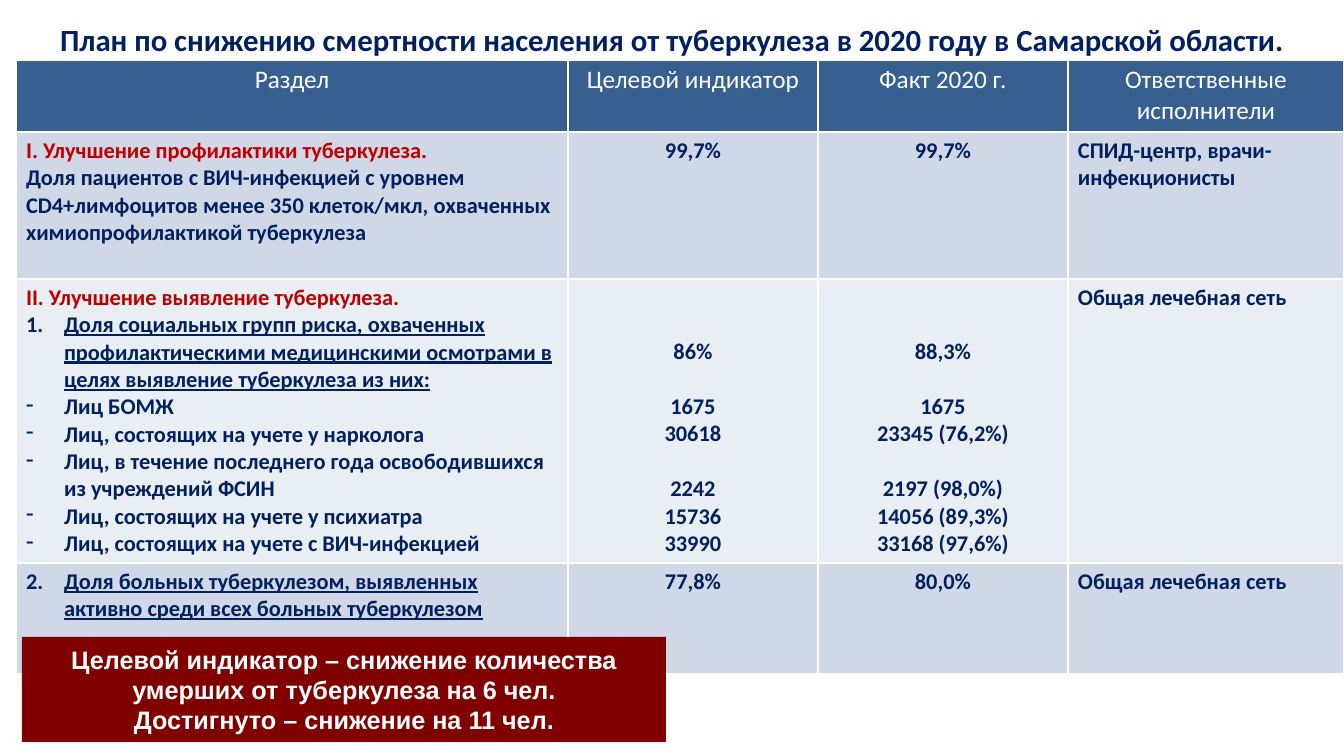
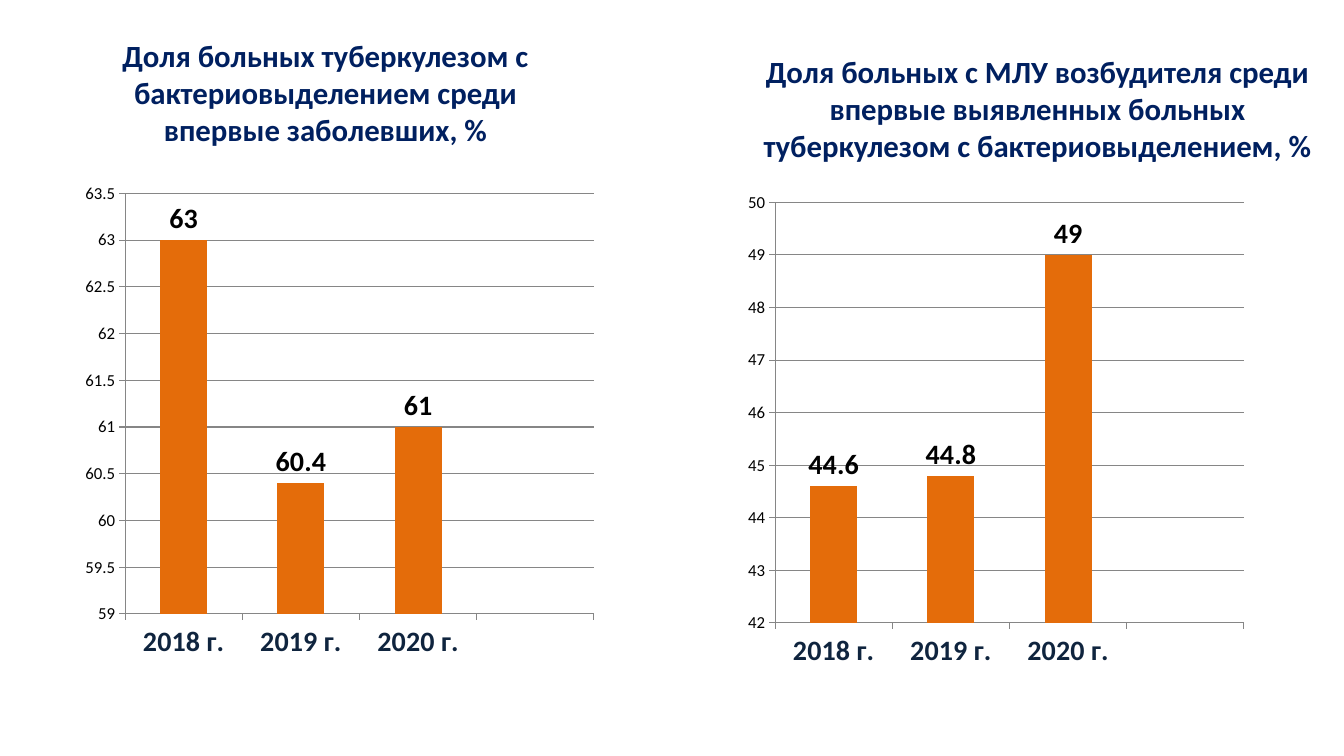
from lxml.etree import SubElement
from pptx import Presentation
from pptx.chart.data import CategoryChartData
from pptx.dml.color import RGBColor
from pptx.enum.chart import XL_CHART_TYPE as ChartType, XL_LABEL_POSITION as LabelAt, XL_TICK_MARK as Tick
from pptx.enum.shapes import MSO_SHAPE as Shape
from pptx.enum.text import MSO_ANCHOR as Anchor, PP_ALIGN as Align
from pptx.oxml.ns import qn
from pptx.util import Emu, Pt

COLORS = {
    "navy": "002060", "red": "C00000", "maroon": "800000", "white": "FFFFFF",
    "header": "376091", "band": "D0D8E8", "light": "E9EDF4",
    "bar": "E46C0A", "category": "0F243E", "black": "000000", "grid": "868686",
}

STYLES = {
    "title": dict(size=22, bold=True, color="navy", align=Align.CENTER),
    "header": dict(size=18, bold=False, color="white", align=Align.CENTER),
    "section": dict(size=16, bold=True, color="red"),
    "body": dict(size=16, bold=True, color="navy"),
    "value": dict(size=16, bold=True, color="navy", align=Align.CENTER),
    "first": dict(size=16, bold=True, color="navy", underline=True, number=1),
    "second": dict(size=16, bold=True, color="navy", underline=True, number=2),
    "dash": dict(size=16, bold=True, color="navy", dash="-"),
    "result": dict(size=18, bold=True, color="white", align=Align.CENTER, name="Arial"),
    "category": dict(size=20, bold=True, color="category"),
    "scale": dict(size=12, bold=False, color="black"),
    "label": dict(size=20, bold=True, color="black"),
}

PLAN_TITLE = "План по снижению смертности населения от туберкулеза в 2020 году в Самарской области."
PLAN_COLUMNS = [552, 250, 250, 276]
PLAN_ROWS = [
    (72, "header", [
        [("header", "Раздел")], [("header", "Целевой индикатор")],
        [("header", "Факт 2020 г.")], [("header", "Ответственные исполнители")],
    ]),
    (147, "band", [
        [("section", "I. Улучшение профилактики туберкулеза."),
         ("body", "Доля пациентов с ВИЧ-инфекцией с уровнем CD4+лимфоцитов менее 350 клеток/мкл, "
                  "охваченных химиопрофилактикой туберкулеза")],
        [("value", "99,7%")], [("value", "99,7%")],
        [("body", "СПИД-центр, врачи-инфекционисты")],
    ]),
    (284, "light", [
        [("section", "II. Улучшение выявление туберкулеза."),
         ("first", "Доля социальных групп риска, охваченных профилактическими медицинскими "
                   "осмотрами в целях выявление туберкулеза из них:"),
         ("dash", "Лиц БОМЖ"),
         ("dash", "Лиц, состоящих на учете у нарколога"),
         ("dash", "Лиц, в течение последнего года освободившихся из учреждений ФСИН"),
         ("dash", "Лиц, состоящих на учете у психиатра"),
         ("dash", "Лиц, состоящих на учете с ВИЧ-инфекцией")],
        [("value", "86%", 2), ("value", "1675", 1), ("value", "30618"),
         ("value", "2242", 1), ("value", "15736"), ("value", "33990")],
        [("value", "88,3%", 2), ("value", "1675", 1), ("value", "23345 (76,2%)"),
         ("value", "2197 (98,0%)", 1), ("value", "14056 (89,3%)"), ("value", "33168 (97,6%)")],
        [("body", "Общая лечебная сеть")],
    ]),
    (111, "band", [
        [("second", "Доля больных туберкулезом, выявленных активно среди всех больных туберкулезом")],
        [("value", "77,8%")], [("value", "80,0%")],
        [("body", "Общая лечебная сеть")],
    ]),
]
RESULT = [
    ("result", "Целевой индикатор – снижение количества умерших от туберкулеза на 6 чел."),
    ("result", "Достигнуто – снижение на 11 чел."),
]

YEARS = ["2018 г.", "2019 г.", "2020 г.", ""]
SHARES = [
    dict(title="Доля больных туберкулезом с бактериовыделением среди впервые заболевших, %",
         title_box=(70, 29, 511, 126), chart_box=(68, 176, 539, 499),
         values=[63, 60.4, 61, None], low=59, high=63.5, step=0.5, plot_left=0.106),
    dict(title="Доля больных с МЛУ возбудителя среди впервые выявленных больных "
               "туберкулезом с бактериовыделением, %",
         title_box=(748, 47, 579, 122), chart_box=(711, 185, 539, 499),
         values=[44.6, 44.8, 49, None], low=42, high=50, step=1, plot_left=0.119),
]

LINE = Pt(19.5)
CELL_TOP = 5
HANGING = 38


def px(length):
    return Emu(round(length * 914400 / 100.8))


def rgb(color):
    return RGBColor.from_string(COLORS[color])


def set_font(font, style):
    values = dict(name=style.get("name", "Calibri"), size=Pt(style["size"]),
                  bold=style["bold"], underline=style.get("underline"))
    for key, value in values.items():
        setattr(font, key, value)
    font.color.rgb = rgb(style["color"])


def set_bullet(paragraph, style):
    props = paragraph._p.get_or_add_pPr()
    props.set("marL", str(px(HANGING)))
    props.set("indent", str(-px(HANGING)))
    if "dash" in style:
        SubElement(props, qn("a:buChar"), char=style["dash"])
    else:
        SubElement(props, qn("a:buAutoNum"), type="arabicPeriod", startAt=str(style["number"]))


def write(frame, paragraphs):
    frame.word_wrap = True
    for index, (kind, text, *blank) in enumerate(paragraphs):
        style = STYLES[kind]
        paragraph = frame.paragraphs[0] if index == 0 else frame.add_paragraph()
        paragraph.alignment = style.get("align", Align.LEFT)
        if blank and index:
            paragraph.space_before = LINE * blank[0]
        if "dash" in style or "number" in style:
            set_bullet(paragraph, style)
        run = paragraph.add_run()
        run.text = text
        set_font(run.font, style)


def add_title(slide, text, box):
    frame = slide.shapes.add_textbox(*map(px, box)).text_frame
    frame.vertical_anchor = Anchor.MIDDLE
    write(frame, [("title", text)])


def add_borders(cell):
    props = cell._tc.get_or_add_tcPr()
    for side in ("lnL", "lnR", "lnT", "lnB"):
        line = SubElement(props, qn(f"a:{side}"), w=str(Pt(1)))
        SubElement(SubElement(line, qn("a:solidFill")), qn("a:srgbClr"), val=COLORS["white"])


def add_plan(slide):
    height = sum(row[0] for row in PLAN_ROWS)
    table = slide.shapes.add_table(
        len(PLAN_ROWS), len(PLAN_COLUMNS), px(16), px(60), px(sum(PLAN_COLUMNS)), px(height)).table
    for column, width in zip(table.columns, PLAN_COLUMNS):
        column.width = px(width)
    for row, (height, fill, contents) in zip(table.rows, PLAN_ROWS):
        row.height = px(height)
        for cell, paragraphs in zip(row.cells, contents):
            add_borders(cell)
            cell.fill.solid()
            cell.fill.fore_color.rgb = rgb(fill)
            cell.margin_top = px(CELL_TOP) + LINE * sum(paragraphs[0][2:])
            write(cell.text_frame, paragraphs)


def add_result(slide):
    panel = slide.shapes.add_shape(Shape.RECTANGLE, *map(px, (22, 637, 644, 105)))
    panel.shadow.inherit = False
    panel.fill.solid()
    panel.fill.fore_color.rgb = rgb("maroon")
    panel.line.fill.background()
    panel.text_frame.vertical_anchor = Anchor.MIDDLE
    write(panel.text_frame, RESULT)


def set_plot_layout(chart, left):
    area = chart._chartSpace.chart.plotArea
    for old in area.findall(qn("c:layout")):
        area.remove(old)
    layout = area.makeelement(qn("c:layout"))
    area.insert(0, layout)
    manual = SubElement(layout, qn("c:manualLayout"))
    for key, value in dict(layoutTarget="inner", xMode="edge", yMode="edge",
                           x=left, y=0.035, w=0.87, h=0.843).items():
        SubElement(manual, qn(f"c:{key}"), val=str(value))


def add_share(slide, share):
    add_title(slide, share["title"], share["title_box"])
    data = CategoryChartData(number_format="General")
    data.categories = YEARS
    data.add_series("Series 1", share["values"])
    chart = slide.shapes.add_chart(
        ChartType.COLUMN_CLUSTERED, *map(px, share["chart_box"]), data).chart
    chart.has_legend = chart.has_title = False
    chart.font.name, chart.font.size = "Calibri", Pt(18)
    set_plot_layout(chart, share["plot_left"])

    for axis, style in ((chart.category_axis, "category"), (chart.value_axis, "scale")):
        axis.major_tick_mark, axis.minor_tick_mark = Tick.OUTSIDE, Tick.NONE
        set_font(axis.tick_labels.font, STYLES[style])
        axis.format.line.color.rgb = rgb("grid")
    scale = chart.value_axis
    for key, value in dict(minimum_scale=share["low"], maximum_scale=share["high"],
                           major_unit=share["step"], has_major_gridlines=True).items():
        setattr(scale, key, value)
    scale.major_gridlines.format.line.color.rgb = rgb("grid")

    bars = chart.plots[0]
    bars.gap_width, bars.vary_by_categories, bars.has_data_labels = 150, False, True
    labels = bars.data_labels
    labels.show_value, labels.position = True, LabelAt.OUTSIDE_END
    set_font(labels.font, STYLES["label"])
    fill = bars.series[0].format.fill
    fill.solid()
    fill.fore_color.rgb = rgb("bar")


def main():
    deck = Presentation()
    deck.slide_width, deck.slide_height = px(1344), px(756)
    plan, shares = (deck.slides.add_slide(deck.slide_layouts[6]) for _ in range(2))
    add_title(plan, PLAN_TITLE, (0, 0, 1344, 78))
    add_plan(plan)
    add_result(plan)
    for share in SHARES:
        add_share(shares, share)
    deck.save("out.pptx")


if __name__ == "__main__":
    main()
